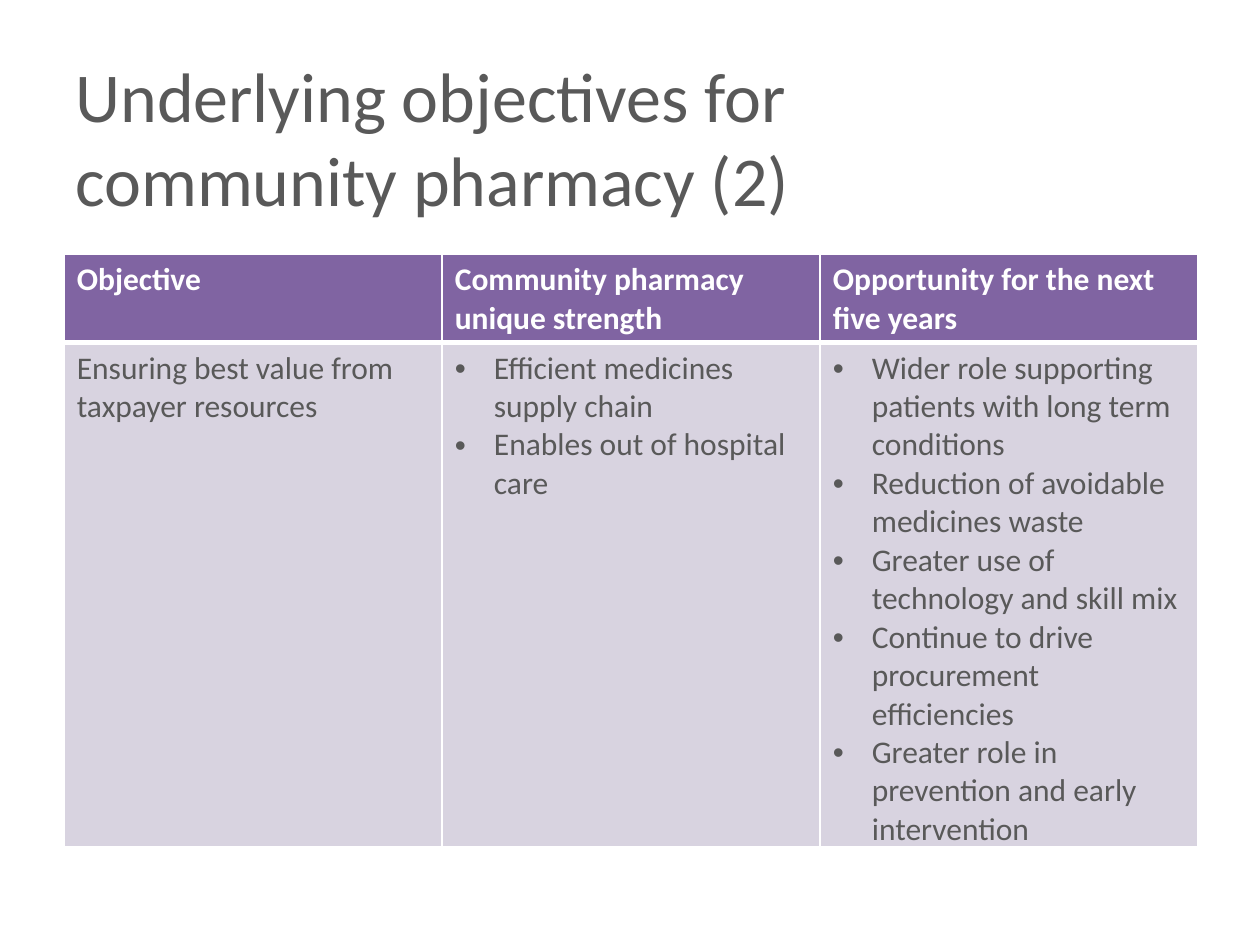
import pptx
import pptx.dml.color
import pptx.enum.text
import pptx.oxml.ns
import pptx.util
from lxml import etree

Inches = pptx.util.Inches
Pt = pptx.util.Pt

TITLE = "Underlying objectives for community pharmacy (2)"
HEADINGS = [
    "Objective",
    "Community pharmacy unique strength",
    "Opportunity for the next five years",
]
OBJECTIVE = ["Ensuring best value from taxpayer resources"]
STRENGTHS = ["Efficient medicines supply chain", "Enables out of hospital care"]
OPPORTUNITIES = [
    "Wider role supporting patients with long term conditions",
    "Reduction of avoidable medicines waste",
    "Greater use of technology and skill mix",
    "Continue to drive procurement efficiencies",
    "Greater role in prevention and early intervention",
]
ROWS = [
    [[heading] for heading in HEADINGS],
    [OBJECTIVE, STRENGTHS, OPPORTUNITIES],
]
ROW_HEIGHTS = [0.7, 4]
COLUMN_WIDTH = 3
INDENT = 0.31

FONT = "Calibri"
GREY, WHITE, PURPLE, LILAC = "595959", "FFFFFF", "8064A2", "D8D3E0"


def colour(value):
    return pptx.dml.color.RGBColor.from_string(value)


def add_child(parent, tag, **attributes):
    return etree.SubElement(parent, pptx.oxml.ns.qn(tag), **attributes)


def style(para, size, value, bold=False):
    for span in para.runs:
        span.font.name = FONT
        span.font.size = Pt(size)
        span.font.bold = bold
        span.font.color.rgb = colour(value)


def add_bullet(para):
    properties = para._p.get_or_add_pPr()
    properties.set("marL", str(Inches(INDENT)))
    properties.set("indent", str(-Inches(INDENT)))
    add_child(properties, "a:buFont", typeface="Arial")
    add_child(properties, "a:buChar", char="•")


def set_borders(cell, top, bottom):
    properties = cell._tc.get_or_add_tcPr()
    for side, width in (("L", 1), ("R", 1), ("T", top), ("B", bottom)):
        line = add_child(properties, f"a:ln{side}", w=str(Pt(width)))
        add_child(add_child(line, "a:solidFill"), "a:srgbClr", val=WHITE)


def fill_cell(cell, lines, is_header, is_list):
    set_borders(cell, *((1, 3) if is_header else (3, 1)))
    cell.fill.solid()
    cell.fill.fore_color.rgb = colour(PURPLE if is_header else LILAC)
    cell.text_frame.text = "\n".join(lines)
    for para in cell.text_frame.paragraphs:
        if is_list:
            add_bullet(para)
        style(para, 18, WHITE if is_header else GREY, is_header)


deck = pptx.Presentation()
deck.slide_width, deck.slide_height = Inches(10), Inches(7.5)
page = deck.slides.add_slide(deck.slide_layouts[6])

# Title
box = page.shapes.add_textbox(Inches(0.5), Inches(0.3), Inches(6.39), Inches(1.56))
box.text_frame.word_wrap = True
box.text_frame.vertical_anchor = pptx.enum.text.MSO_ANCHOR.MIDDLE
box.text_frame.text = TITLE
style(box.text_frame.paragraphs[0], 40, GREY)

# Objectives table
table = page.shapes.add_table(
    len(ROWS), len(HEADINGS), Inches(0.51), Inches(2.02),
    Inches(COLUMN_WIDTH * len(HEADINGS)), Inches(sum(ROW_HEIGHTS)),
).table
for row, height in zip(table.rows, ROW_HEIGHTS):
    row.height = Inches(height)
for row_index, contents in enumerate(ROWS):
    for column_index, lines in enumerate(contents):
        is_header = row_index == 0
        is_list = not is_header and column_index > 0
        fill_cell(table.cell(row_index, column_index), lines, is_header, is_list)

deck.save("out.pptx")
